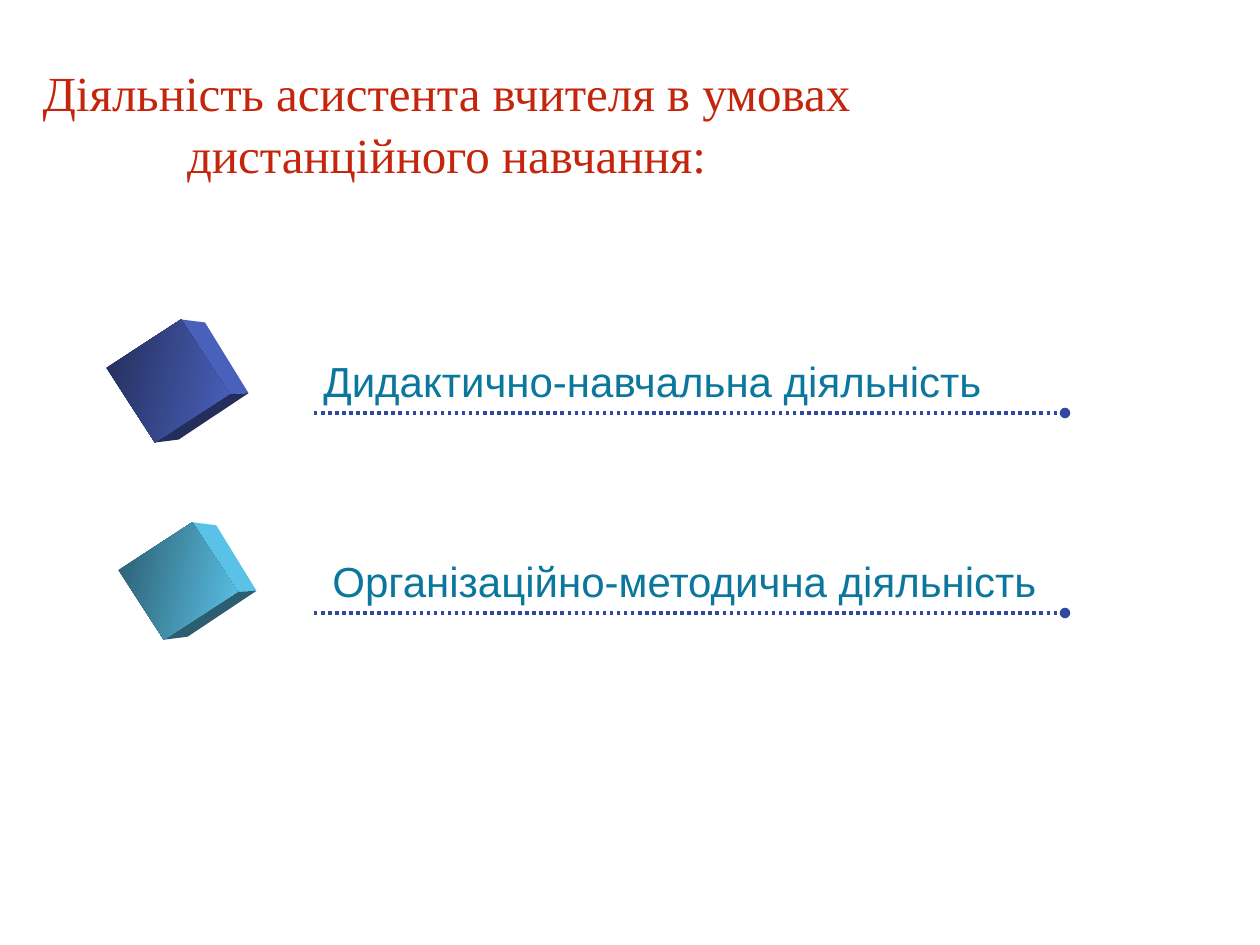
from dataclasses import dataclass
from math import cos, radians, sin

from lxml.etree import SubElement
from pptx import Presentation
from pptx.dml.color import RGBColor
from pptx.enum.dml import MSO_LINE
from pptx.enum.shapes import MSO_CONNECTOR, MSO_SHAPE
from pptx.enum.text import MSO_ANCHOR, MSO_AUTO_SIZE, PP_ALIGN
from pptx.oxml.ns import qn
from pptx.util import Emu, Pt

PX_PER_INCH = 126
CUBE_ANGLE = 57
RULE_LEFT, RULE_RIGHT = 314, 1065

TITLE_RED = RGBColor(0xC3, 0x26, 0x0C)
LABEL_TEAL = RGBColor(0x0C, 0x77, 0x9D)
RULE_BLUE = RGBColor(0x31, 0x48, 0x9F)
BLUE_LIGHT = RGBColor(0x4A, 0x61, 0xBC)
BLUE_DARK = RGBColor(0x23, 0x2E, 0x5A)
CYAN_LIGHT = RGBColor(0x5A, 0xC2, 0xE7)
CYAN_DARK = RGBColor(0x2C, 0x5D, 0x70)


@dataclass
class Cube:
    """Front face by centre and size, with its lit and shaded colours."""
    center_x: int
    center_y: int
    width: int
    height: int
    light: RGBColor
    dark: RGBColor


@dataclass
class Activity:
    label: str
    label_left: int
    label_top: int
    label_width: int
    rule_y: int
    cube: Cube


ACTIVITIES = [
    Activity("Дидактично-навчальна діяльність", 311, 349, 690, 413,
             Cube(168, 381, 89, 89, BLUE_LIGHT, BLUE_DARK)),
    Activity("Організаційно-методична діяльність", 320, 549, 737, 613,
             Cube(178, 581, 83, 88, CYAN_LIGHT, CYAN_DARK)),
]


def px(length: float) -> Emu:
    return Emu(round(length * 914400 / PX_PER_INCH))


def add_title(slide, text: str) -> None:
    title = slide.shapes.title
    title.left, title.top, title.width, title.height = px(0), px(37), px(893), px(169)
    frame = title.text_frame
    frame.text = text
    frame.word_wrap = True
    frame.vertical_anchor = MSO_ANCHOR.MIDDLE
    paragraph = frame.paragraphs[0]
    paragraph.alignment = PP_ALIGN.CENTER
    paragraph.line_spacing = 1.05
    paragraph.font.name = "Times New Roman"
    paragraph.font.size = Pt(28)
    paragraph.font.color.rgb = TITLE_RED


def add_side(slide, points: list, color: RGBColor) -> None:
    builder = slide.shapes.build_freeform(px(points[0][0]), px(points[0][1]))
    builder.add_line_segments([(px(x), px(y)) for x, y in points[1:]], close=True)
    side = builder.convert_to_shape()
    side.shadow.inherit = False
    side.fill.solid()
    side.fill.fore_color.rgb = color
    side.line.fill.background()


def add_cube(slide, cube: Cube) -> None:
    def corner(side_x: int, side_y: int) -> tuple:
        x, y = side_x * cube.width / 2, side_y * cube.height / 2
        turn = radians(CUBE_ANGLE)
        return (cube.center_x + x * cos(turn) - y * sin(turn),
                cube.center_y + x * sin(turn) + y * cos(turn))

    top, right, bottom = corner(-1, -1), corner(1, -1), corner(1, 1)
    back_top = (top[0] + 24, top[1] + 3)
    back_right = (right[0] + 19, right[1] - 1)
    back_bottom = (bottom[0] + 24, bottom[1] - 3)

    # Depth of the cube
    add_side(slide, [top, back_top, back_right, right], cube.light)
    add_side(slide, [right, back_right, back_bottom, bottom], cube.dark)

    # Front face
    face = slide.shapes.add_shape(
        MSO_SHAPE.RECTANGLE,
        px(cube.center_x - cube.width / 2), px(cube.center_y - cube.height / 2),
        px(cube.width), px(cube.height))
    face.rotation = CUBE_ANGLE
    face.shadow.inherit = False
    face.line.fill.background()
    face.fill.gradient()
    face.fill.gradient_angle = 45
    for stop, color in zip(face.fill.gradient_stops, (cube.dark, cube.light)):
        stop.color.rgb = color


def add_rule(slide, y: int) -> None:
    rule = slide.shapes.add_connector(
        MSO_CONNECTOR.STRAIGHT, px(RULE_LEFT), px(y), px(RULE_RIGHT), px(y))
    rule.line.color.rgb = RULE_BLUE
    rule.line.width = Pt(2)
    rule.line.dash_style = MSO_LINE.ROUND_DOT  # stored as sysDot
    properties = rule._element.spPr
    SubElement(properties.find(qn("a:ln")), qn("a:tailEnd"), type="oval")
    SubElement(properties, qn("a:effectLst"))


def add_label(slide, activity: Activity) -> None:
    box = slide.shapes.add_textbox(
        px(activity.label_left), px(activity.label_top),
        px(activity.label_width), px(63))
    frame = box.text_frame
    frame.text = activity.label
    frame.word_wrap = False
    frame.auto_size = MSO_AUTO_SIZE.SHAPE_TO_FIT_TEXT
    font = frame.paragraphs[0].font
    font.name = "Arial"
    font.size = Pt(24)
    font.color.rgb = LABEL_TEAL


def main() -> None:
    presentation = Presentation()
    presentation.slide_width, presentation.slide_height = px(1260), px(945)
    slide = presentation.slides.add_slide(presentation.slide_layouts[5])

    add_title(slide, "Діяльність асистента вчителя в умовах дистанційного навчання:")
    for activity in ACTIVITIES:
        add_rule(slide, activity.rule_y)
        add_cube(slide, activity.cube)
        add_label(slide, activity)

    presentation.save("out.pptx")


if __name__ == "__main__":
    main()
